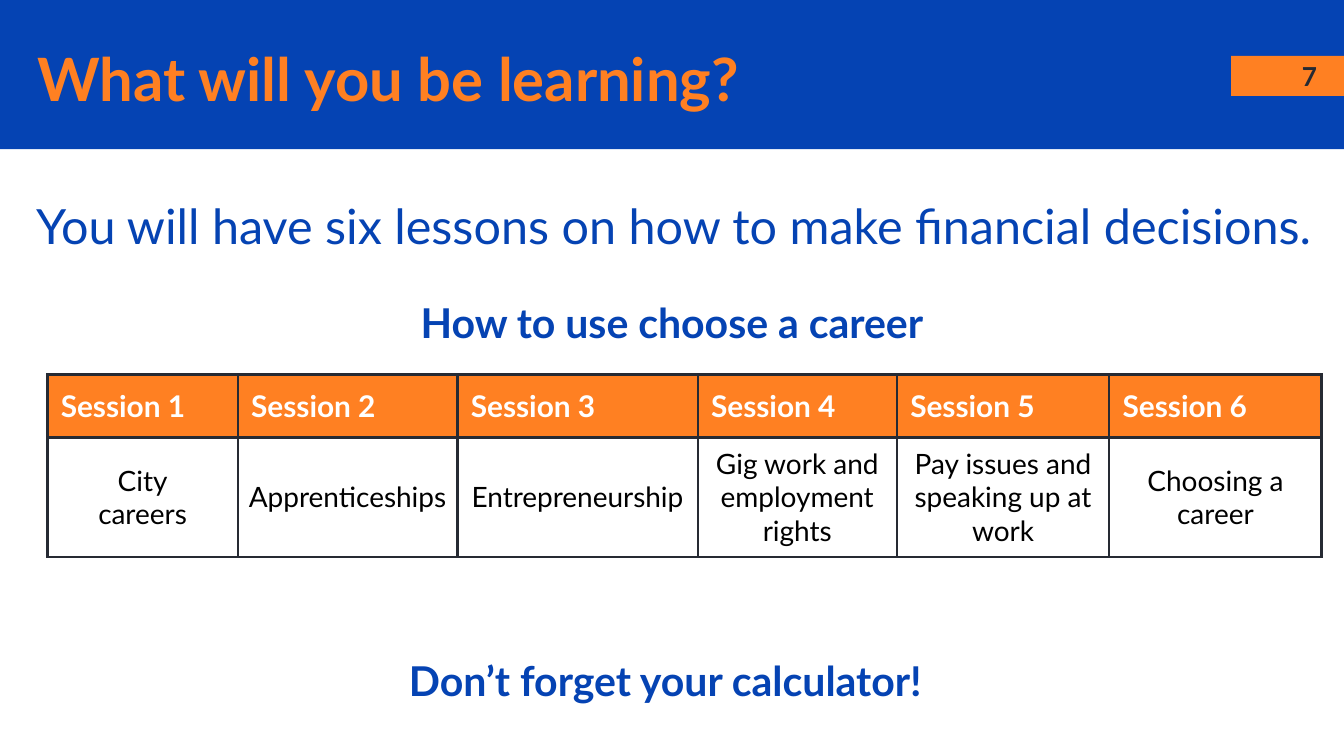
from dataclasses import dataclass

from lxml.etree import SubElement
from pptx import Presentation
from pptx.dml.color import RGBColor as Rgb
from pptx.enum.shapes import MSO_SHAPE as Shape
from pptx.enum.text import MSO_ANCHOR as Anchor, PP_ALIGN as Align
from pptx.oxml.ns import qn
from pptx.slide import Slide
from pptx.table import _Cell as Cell
from pptx.util import Pt


@dataclass(frozen=True)
class Theme:
    """Colours, font and type sizes of the slide."""
    font: str = "Lato"
    blue: str = "0543B3"
    orange: str = "FF8022"
    ink: str = "262A33"
    white: str = "FFFFFF"
    black: str = "000000"
    title: float = 32
    lead: float = 26
    heading: float = 22
    session: float = 16
    topic: float = 15
    number: float = 14
    border: float = 1.5


THEME = Theme()


@dataclass(frozen=True)
class Area:
    """A rectangle in points."""
    left: float
    top: float
    width: float
    height: float

    def lengths(self) -> tuple:
        """Return the four lengths for python-pptx."""
        return Pt(self.left), Pt(self.top), Pt(self.width), Pt(self.height)


@dataclass(frozen=True)
class Label:
    """A piece of text with its format."""
    text: str
    size: float
    color: str
    bold: bool = True
    align: Align = Align.LEFT
    anchor: Anchor = Anchor.TOP
    inset: float = 7.2
    spacing: float = 1.0


@dataclass(frozen=True)
class Session:
    """A column of the session table."""
    topic: str
    width: float


BANDS = [
    (Area(0, 0, 720, 80), THEME.blue),
    (Area(659.5, 30, 60.5, 21.5), THEME.orange),
]
LABELS = [
    (Area(683, 32, 37, 18), Label("7", THEME.number, THEME.ink, align=Align.CENTER, anchor=Anchor.MIDDLE)),
    (Area(211, 152, 298, 41), Label("How to use choose a career", THEME.heading, THEME.blue, align=Align.CENTER)),
    (Area(20, 16.5, 632, 61),
     Label("What will you be learning?", THEME.title, THEME.orange, inset=0, spacing=1.15)),
    (Area(12.25, 93, 701, 46),
     Label("You will have six lessons on how to make financial decisions.",
           THEME.lead, THEME.blue, bold=False, spacing=1.15)),
    (Area(191.5, 344, 330, 41),
     Label("Don’t forget your calculator!", THEME.heading, THEME.blue, align=Align.CENTER)),
]
SESSIONS = [
    Session("City\ncareers", 102),
    Session("Apprenticeships", 117.7),
    Session("Entrepreneurship", 128.7),
    Session("Gig work and employment rights", 106.7),
    Session("Pay issues and speaking up at work", 113.8),
    Session("Choosing a career", 113.8),
]
TABLE_LEFT, TABLE_TOP = 25.4, 200.7
ROW_HEIGHTS = (33.6, 64)


def apply(target: object, values: dict) -> None:
    """Set every named attribute on the target."""
    for name, value in values.items():
        setattr(target, name, value)


def write(holder: object, label: Label) -> None:
    """Write a label into a text frame."""
    holder.text = label.text
    for para in holder.paragraphs:
        apply(para, {"alignment": label.align, "line_spacing": label.spacing})
        for span in para.runs:
            apply(span.font, {"name": THEME.font, "size": Pt(label.size), "bold": label.bold})
            span.font.color.rgb = Rgb.from_string(label.color)


def margins(inset: float) -> dict:
    """Return equal margins for all four sides."""
    return {f"margin_{side}": Pt(inset) for side in ("left", "right", "top", "bottom")}


def add_band(page: Slide, area: Area, color: str) -> None:
    """Draw a plain filled rectangle."""
    band = page.shapes.add_shape(Shape.RECTANGLE, *area.lengths())
    band.shadow.inherit = False
    band.fill.solid()
    band.fill.fore_color.rgb = Rgb.from_string(color)
    band.line.fill.background()


def add_label(page: Slide, area: Area, label: Label) -> None:
    """Draw a text box."""
    frame = page.shapes.add_textbox(*area.lengths()).text_frame
    apply(frame, {"word_wrap": True, "vertical_anchor": label.anchor, **margins(label.inset)})
    write(frame, label)


def add_borders(cell: Cell) -> None:
    """Put a solid line on each side of a cell."""
    props = cell._tc.get_or_add_tcPr()
    for index, side in enumerate(("lnL", "lnR", "lnT", "lnB")):
        line = props.makeelement(qn(f"a:{side}"), {"w": str(Pt(THEME.border))})
        SubElement(SubElement(line, qn("a:solidFill")), qn("a:srgbClr"), val=THEME.ink)
        props.insert(index, line)


def fill_cell(cell: Cell, label: Label, color: str) -> None:
    """Write, fill and outline one table cell."""
    apply(cell, {"vertical_anchor": label.anchor, **margins(label.inset)})
    write(cell.text_frame, label)
    cell.fill.solid()
    cell.fill.fore_color.rgb = Rgb.from_string(color)
    add_borders(cell)


def add_sessions(page: Slide) -> None:
    """Draw the table of sessions."""
    area = Area(TABLE_LEFT, TABLE_TOP, sum(item.width for item in SESSIONS), sum(ROW_HEIGHTS))
    table = page.shapes.add_table(len(ROW_HEIGHTS), len(SESSIONS), *area.lengths()).table
    apply(table, {"first_row": False, "horz_banding": False})
    for row, height in zip(table.rows, ROW_HEIGHTS):
        row.height = Pt(height)
    for index, session in enumerate(SESSIONS):
        table.columns[index].width = Pt(session.width)
        header = Label(f"Session {index + 1}", THEME.session, THEME.white)
        topic = Label(session.topic, THEME.topic, THEME.black, bold=False,
                      align=Align.CENTER, anchor=Anchor.MIDDLE, inset=5)
        fill_cell(table.cell(0, index), header, THEME.orange)
        fill_cell(table.cell(1, index), topic, THEME.white)


def main() -> None:
    """Build the slide and save the deck."""
    deck = Presentation()
    apply(deck, {"slide_width": Pt(720), "slide_height": Pt(405)})
    page = deck.slides.add_slide(deck.slide_layouts[6])
    for area, color in BANDS:
        add_band(page, area, color)
    for area, label in LABELS:
        add_label(page, area, label)
    add_sessions(page)
    deck.save("out.pptx")


if __name__ == "__main__":
    main()
